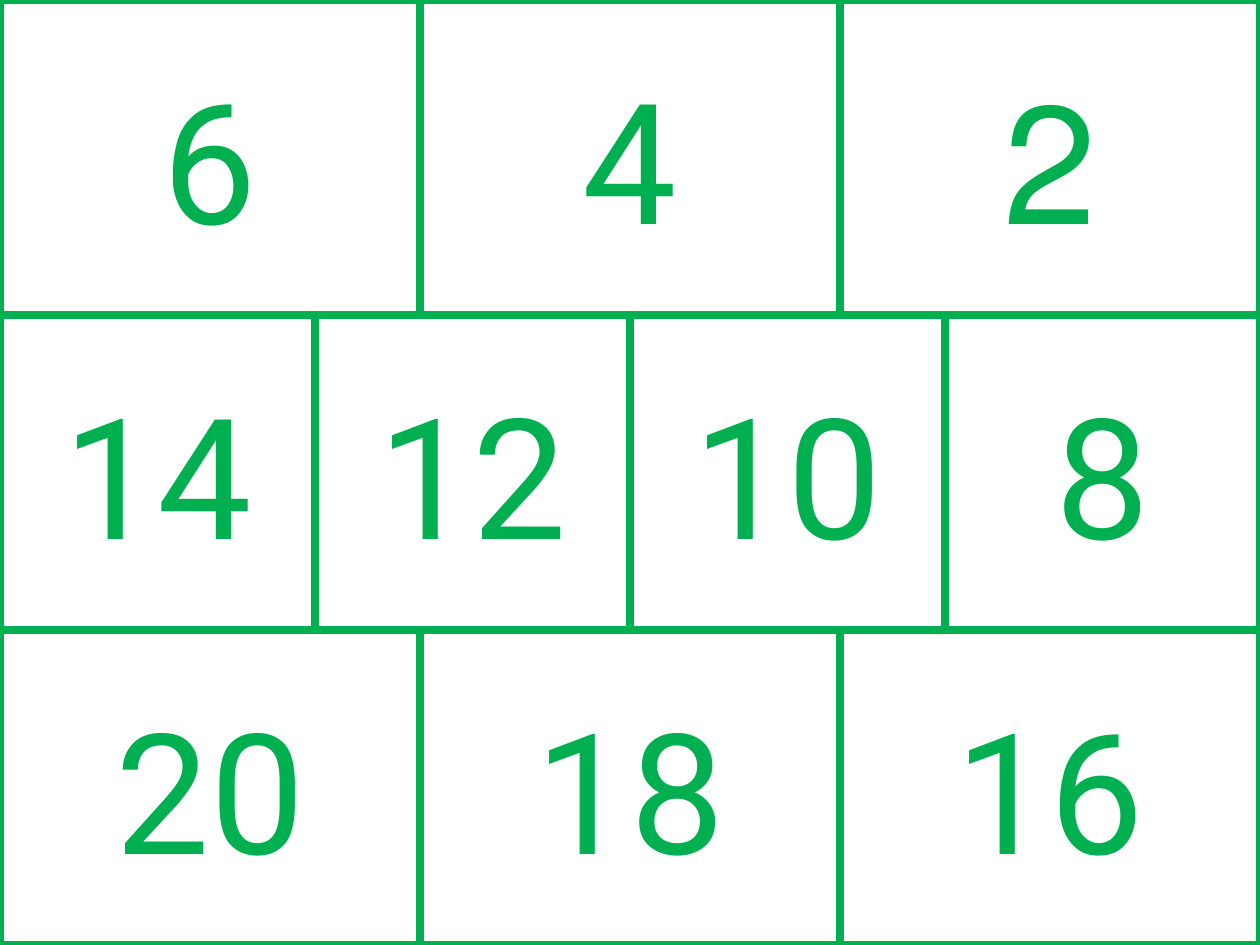
import pptx
import pptx.util
import pptx.dml.color
import pptx.enum.shapes
import pptx.enum.text
import pptx.oxml
import pptx.oxml.ns
from pptx.util import Inches

HUES = {"green": "00B050", "white": "FFFFFF"}
WIDE, HIGH = 10, 7.5
ROWS = [["6", "4", "2"], ["14", "12", "10", "8"], ["20", "18", "16"]]


def hue(name):
    return pptx.dml.color.RGBColor.from_string(HUES[name])


def write(shape, text, size=96, font="Roboto", color="green", edge="white", rtl=False):
    frame = shape.text_frame
    frame.word_wrap = True
    frame.vertical_anchor = pptx.enum.text.MSO_ANCHOR.MIDDLE
    para = frame.paragraphs[0]
    para.alignment = pptx.enum.text.PP_ALIGN.CENTER
    if rtl:
        para._p.get_or_add_pPr().set("rtl", "1")
    run = para.add_run()
    run.text = text
    run.font.size = pptx.util.Pt(size)
    run.font.name = font
    run.font.color.rgb = hue(color)
    # Thin outline around the digits
    line = pptx.oxml.parse_xml(
        f'<a:ln {pptx.oxml.ns.nsdecls("a")} w="{pptx.util.Pt(1.45)}"><a:solidFill>'
        f'<a:srgbClr val="{HUES[edge]}"/></a:solidFill></a:ln>')
    run.font._element.insert(0, line)


# Slide
deck = pptx.Presentation()
deck.slide_width, deck.slide_height = Inches(WIDE), Inches(HIGH)
slide = deck.slides.add_slide(deck.slide_layouts[6])

# Number cells: each row is split into equal parts
tall = HIGH / len(ROWS)
for row, cells in enumerate(ROWS):
    width = WIDE / len(cells)
    for col, text in enumerate(cells):
        cell = slide.shapes.add_shape(
            pptx.enum.shapes.MSO_SHAPE.RECTANGLE,
            Inches(col * width), Inches(row * tall), Inches(width), Inches(tall))
        cell.shadow.inherit = False
        cell.fill.solid()
        cell.fill.fore_color.rgb = hue("white")
        cell.line.color.rgb = hue("green")
        cell.line.width = pptx.util.Pt(5)
        write(cell, text, rtl=text == "2")

deck.save("out.pptx")
